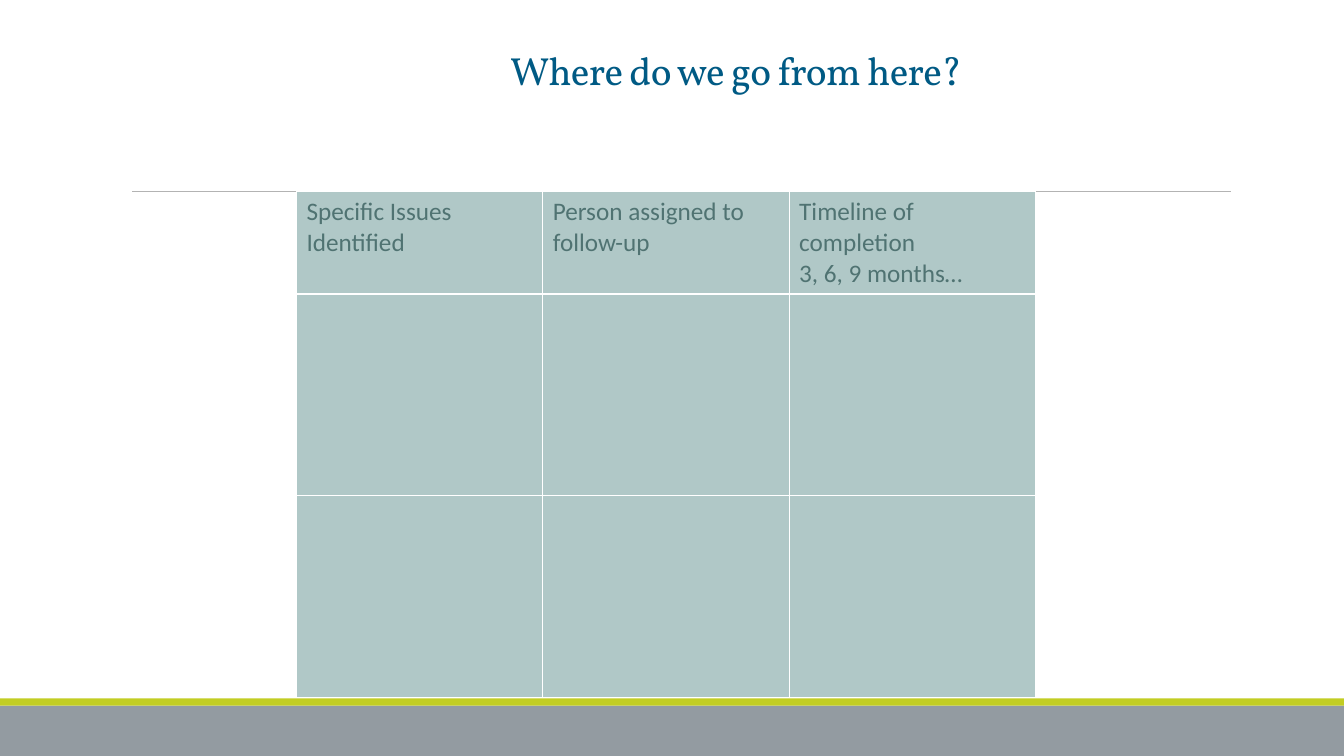
from lxml import etree
from pptx import Presentation
from pptx import util as u
from pptx.dml.color import RGBColor
from pptx.enum import shapes, text
from pptx.oxml import ns

COLORS = {"title": "005A84", "footer": "939BA1", "accent": "C2CD23", "rule": "B3B3B3",
          "cell": "B0C8C7", "cell_text": "507372", "border": "FFFFFF"}


def rgb(name):
    return RGBColor.from_string(COLORS[name])


def set_font(font, color, **values):
    for key, value in values.items():
        setattr(font, key, value)
    font.color.rgb = rgb(color)


prs = Presentation()
prs.slide_width, prs.slide_height = u.Inches(13.33), u.Inches(7.5)
s = prs.slides.add_slide(prs.slide_layouts[5])

# Footer bands
for color, top, height in [("footer", 7, 0.5), ("accent", 6.93, 0.07)]:
    sp = s.shapes.add_shape(shapes.MSO_SHAPE.RECTANGLE, 0, u.Inches(top),
                            prs.slide_width, u.Inches(height))
    sp.shadow.inherit = False
    sp.fill.solid()
    sp.fill.fore_color.rgb = rgb(color)
    sp.line.fill.background()

# Rule behind the table
rule = s.shapes.add_connector(shapes.MSO_CONNECTOR.STRAIGHT, u.Inches(1.31), u.Inches(1.9),
                              u.Inches(12.21), u.Inches(1.9))
rule.line.color.rgb = rgb("rule")
rule.line.width = u.Pt(0.75)
etree.SubElement(rule._element.spPr, ns.qn("a:effectLst"))

# Title
title = s.shapes.title
title.left, title.top, title.width, title.height = map(u.Inches, (4.96, 0.46, 6.71, 0.52))
tf = title.text_frame
tf.text = "Where do we go from here?"
tf.word_wrap = True
tf.auto_size = text.MSO_AUTO_SIZE.NONE
tf.vertical_anchor = text.MSO_ANCHOR.BOTTOM
p = tf.paragraphs[0]
p.alignment = text.PP_ALIGN.LEFT
p.line_spacing = 0.85
r = p.runs[0]
set_font(r.font, "title", name="Vollkorn", size=u.Pt(28))
r.font._element.set("spc", "-50")

# Follow-up table
headers = ["Specific Issues Identified", "Person assigned to follow-up",
           "Timeline of completion\n3, 6, 9 months…"]
row_heights = [1.01, 2, 2]
table = s.shapes.add_table(len(row_heights), len(headers), u.Inches(2.94), u.Inches(1.9),
                           u.Inches(7.33), u.Inches(sum(row_heights))).table
table.first_row = table.horz_banding = False
for row, height in zip(table.rows, row_heights):
    row.height = u.Inches(height)
for col, header in enumerate(headers):
    table.cell(0, col).text = header

for cell in table.iter_cells():
    # Borders come before the fill in the cell properties
    tcPr = cell._tc.get_or_add_tcPr()
    for side in "LRTB":
        ln = etree.SubElement(tcPr, ns.qn(f"a:ln{side}"), w=str(u.Pt(1)))
        fill = etree.SubElement(ln, ns.qn("a:solidFill"))
        etree.SubElement(fill, ns.qn("a:srgbClr"), val=COLORS["border"])
    cell.fill.solid()
    cell.fill.fore_color.rgb = rgb("cell")
    for p in cell.text_frame.paragraphs:
        for r in p.runs:
            set_font(r.font, "cell_text", name="Calibri", size=u.Pt(18), bold=False)

prs.save("out.pptx")
